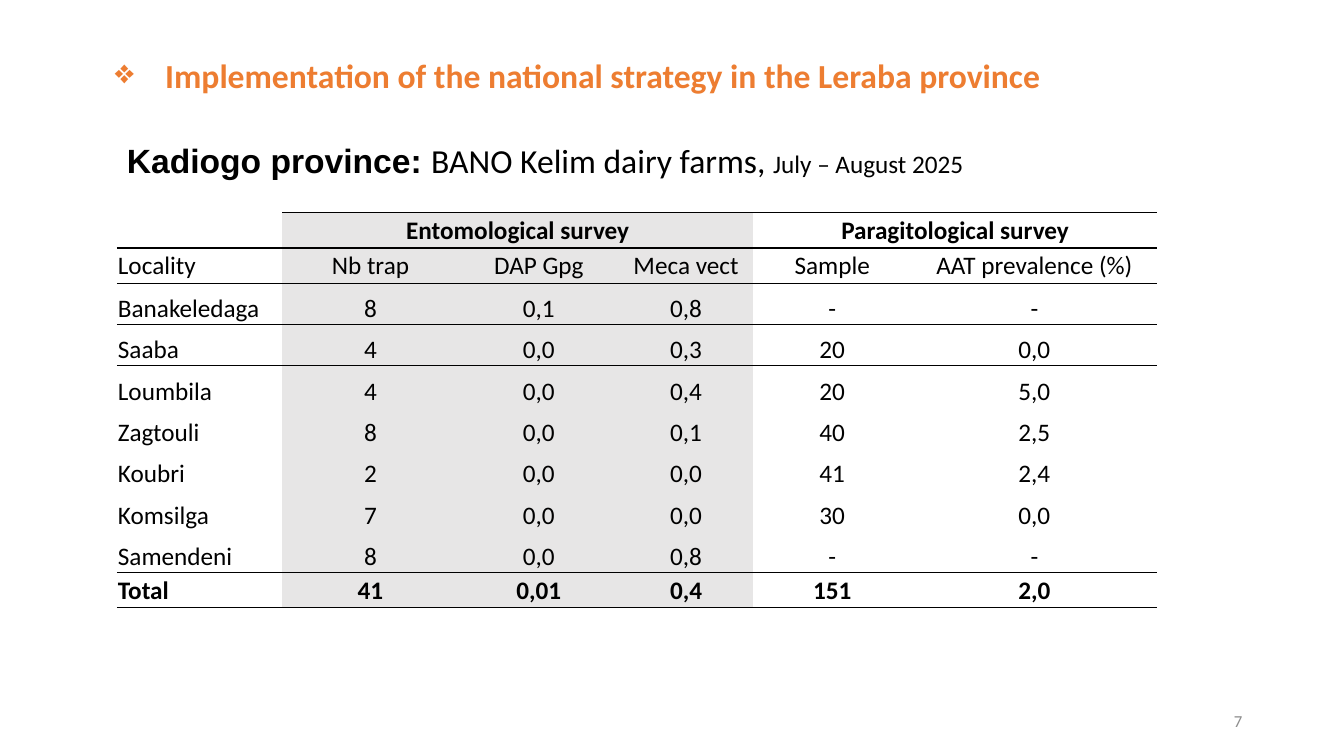
from lxml import etree
from pptx import Presentation
from pptx.dml.color import RGBColor
from pptx.enum.text import MSO_ANCHOR, PP_ALIGN
from pptx.oxml.ns import qn
from pptx.util import Inches, Pt

MID = MSO_ANCHOR.MIDDLE
LEFT, MID_X, RIGHT = PP_ALIGN.LEFT, PP_ALIGN.CENTER, PP_ALIGN.RIGHT
PLAIN = "{2D5ABB26-0587-4C30-8999-92F81FD0307C}"
BLACK, GREY, SHADE, ORANGE = "000000", "8C8C8C", "E7E6E6", "ED7D31"
WIDTHS = [1.64, 1.75, 1.59, 1.33, 1.57, 2.44]
ROWS = [
    ["", "Entomological survey", "", "", "Paragitological survey", ""],
    ["Locality", "Nb trap", "DAP Gpg", "Meca vect", "Sample", "AAT prevalence (%)"],
    ["Banakeledaga", "8", "0,1", "0,8", "-", "-"],
    ["Saaba", "4", "0,0", "0,3", "20", "0,0"],
    ["Loumbila", "4", "0,0", "0,4", "20", "5,0"],
    ["Zagtouli", "8", "0,0", "0,1", "40", "2,5"],
    ["Koubri", "2", "0,0", "0,0", "41", "2,4"],
    ["Komsilga", "7", "0,0", "0,0", "30", "0,0"],
    ["Samendeni", "8", "0,0", "0,8", "-", "-"],
    ["Total", "41", "0,01", "0,4", "151", "2,0"],
]
LAST = len(ROWS) - 1
RULED = {0, 1, 2, LAST - 1, LAST}


def color(code):
    return RGBColor.from_string(code)


class Deck:
    """Hold the text style and the current slide."""

    def __init__(self, slide, face="Calibri", size=18):
        self.slide, self.face, self.size = slide, face, size

    def run(self, para, text, size=None, bold=False, ink=BLACK, face=None):
        run = para.add_run()
        run.text = text
        font = run.font
        font.name, font.size = face or self.face, Pt(size or self.size)
        font.bold = bold
        font.color.rgb = color(ink)

    def box(self, x, y, w, h, align=LEFT):
        shape = self.slide.shapes.add_textbox(*map(Inches, (x, y, w, h)))
        frame = shape.text_frame
        frame.word_wrap, frame.vertical_anchor = True, MID
        para = frame.paragraphs[0]
        para.alignment = align
        return para

    def bullet(self, para, mark, indent):
        props = para._p.get_or_add_pPr()
        props.set("marL", str(Inches(indent)))
        props.set("indent", str(-Inches(indent)))
        etree.SubElement(props, qn("a:buChar")).set("char", mark)

    def edge(self, cell, side):
        props = cell._tc.get_or_add_tcPr()
        line = etree.Element(qn("a:ln" + side), w=str(Pt(1)))
        fill = etree.SubElement(line, qn("a:solidFill"))
        etree.SubElement(fill, qn("a:srgbClr")).set("val", BLACK)
        props.insert(len(props.findall(qn("a:lnT"))), line)

    def cell(self, cell, text, row, col):
        cell.margin_left = cell.margin_right = cell.margin_top = Inches(0.01)
        cell.margin_bottom = 0
        cell.vertical_anchor = MID
        if 1 <= col <= 3:
            cell.fill.solid()
            cell.fill.fore_color.rgb = color(SHADE)
        else:
            cell.fill.background()
        if row - 1 in RULED or (row == 0 and col):
            self.edge(cell, "T")
        if row in RULED:
            self.edge(cell, "B")
        para = cell.text_frame.paragraphs[0]
        para.alignment = MID_X if col else LEFT
        para.font.size = Pt(self.size)
        if 1 < row < LAST:
            para.line_spacing = 1.3
        if text:
            self.run(para, text, bold=row in (0, LAST))

    def table(self, x, y, rows, widths):
        tall = [0.41 if 1 < i < LAST else 0.35 for i in range(len(rows))]
        size = x, y, sum(widths), sum(tall)
        frame = self.slide.shapes.add_table(len(rows), len(widths), *map(Inches, size))
        grid = frame.table
        grid.first_row = grid.horz_banding = False
        grid._tbl.tblPr.find(qn("a:tableStyleId")).text = PLAIN
        for col, width in zip(grid.columns, widths):
            col.width = Inches(width)
        for i, row in enumerate(rows):
            grid.rows[i].height = Inches(tall[i])
            for j, text in enumerate(row):
                self.cell(grid.cell(i, j), text, i, j)
        for start, end in ((1, 3), (4, 5)):
            grid.cell(0, start).merge(grid.cell(0, end))


def main():
    prs = Presentation()
    prs.slide_width, prs.slide_height = Inches(13.33), Inches(7.5)
    deck = Deck(prs.slides.add_slide(prs.slide_layouts[6]))
    deck.run(deck.box(9.42, 6.95, 3, 0.4, RIGHT), "7", 12, ink=GREY)
    deck.table(1.16, 2.11, ROWS, WIDTHS)
    title = deck.box(1.04, 0.46, 11.49, 0.61)
    deck.bullet(title, "❖", 0.5)
    title.line_spacing = 0.9
    deck.run(title, "Implementation of the national strategy in the Leraba province", 24, True, ORANGE)
    sub = deck.box(1.16, 1.34, 8.89, 0.5)
    deck.run(sub, "Kadiogo province: ", 24, True, face="Arial")
    deck.run(sub, "BANO Kelim dairy farms, ", 24)
    deck.run(sub, "July – August 2025")
    prs.save("out.pptx")


if __name__ == "__main__":
    main()
